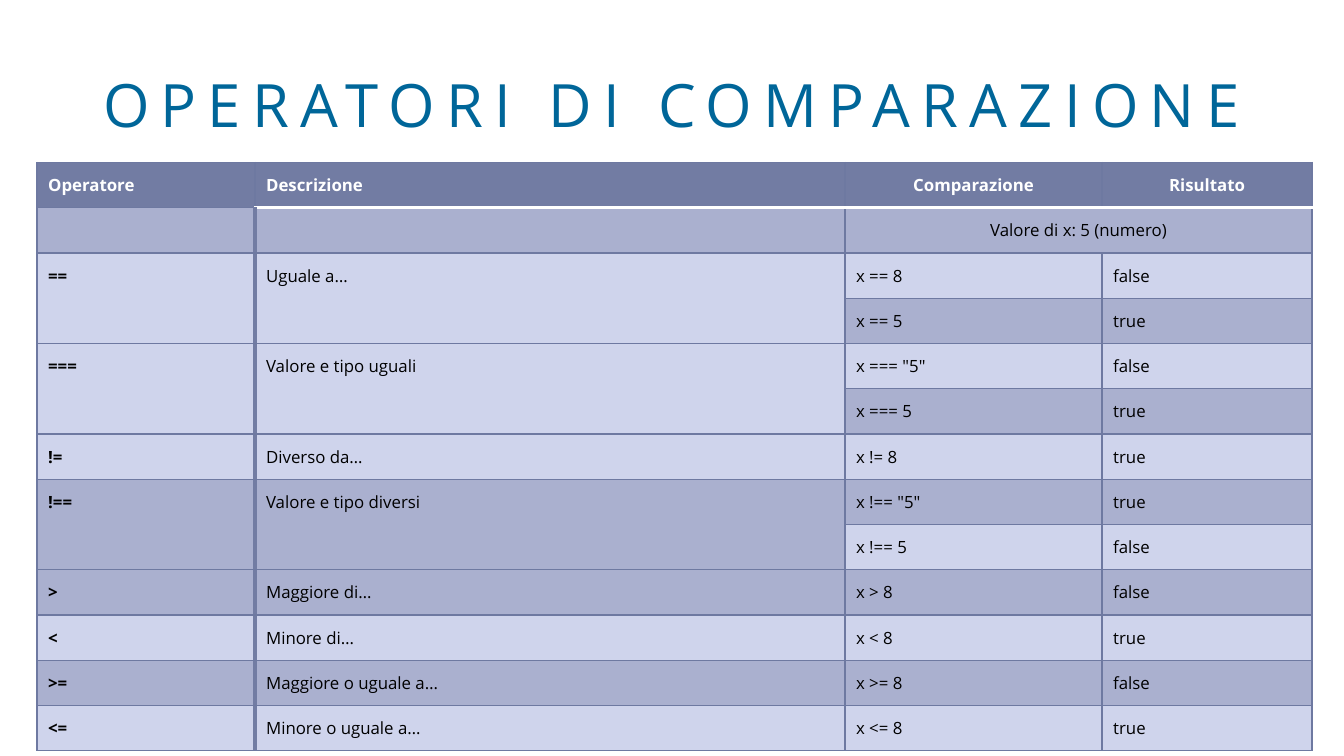
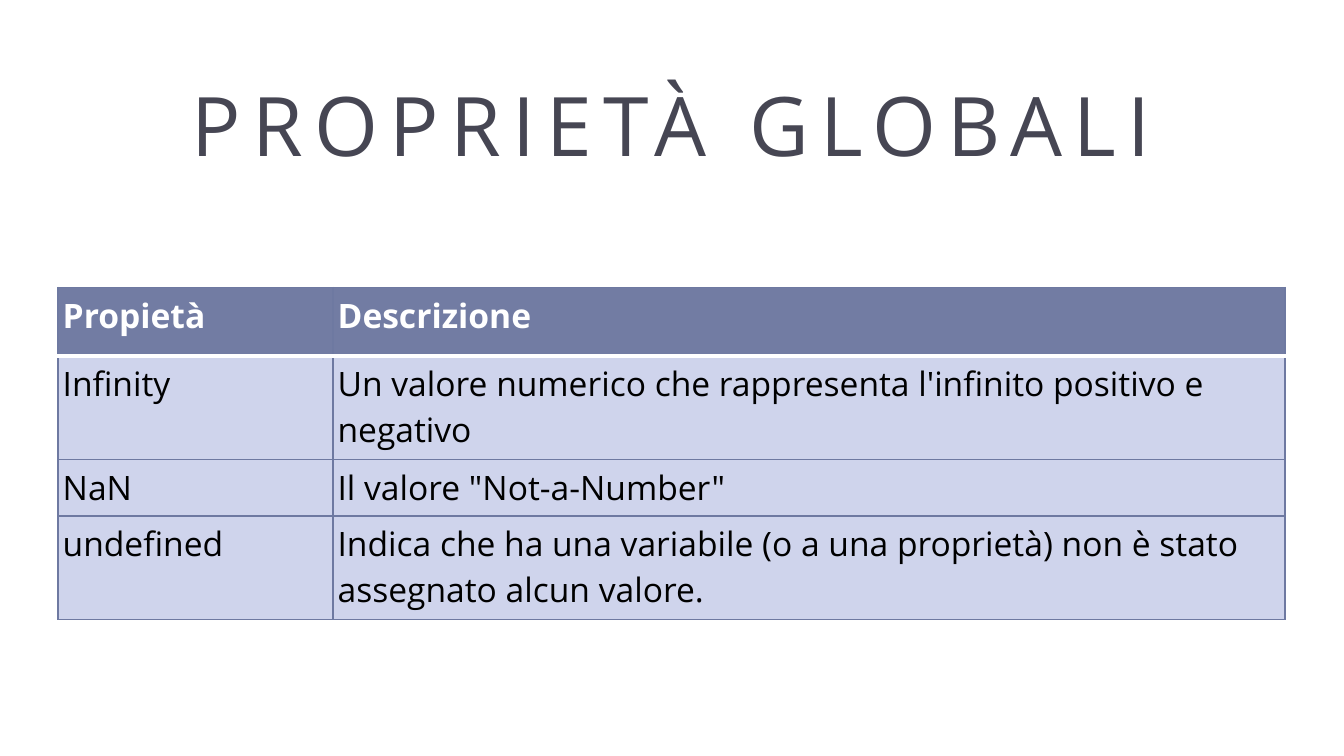
from dataclasses import dataclass

from lxml.etree import SubElement
from pptx import Presentation
from pptx.dml.color import RGBColor
from pptx.enum.text import MSO_ANCHOR as Anchor, PP_ALIGN as Align
from pptx.oxml.ns import qn
from pptx.slide import Slide
from pptx.table import _Cell as Cell
from pptx.text.text import _Paragraph as Paragraph
from pptx.util import Inches, Pt

FONT = "Open Sans"
WIDTH, HEIGHT = Inches(10), Inches(5.625)
WHITE, BLACK = "FFFFFF", "000000"
HEADER, LIGHT, DARK = "727CA3", "CFD4EC", "AAB0CF"
THIN, THICK, RULE = ("6E79A1", 0.75), (HEADER, 2), (WHITE, 2)


@dataclass(frozen=True)
class Title:
    """A slide title; top is a percentage of the slide height."""
    text: str
    top: float
    size: int
    color: str


@dataclass(frozen=True)
class Grid:
    """A table; lengths are percentages of the slide, padding is in points."""
    left: float
    top: float
    columns: tuple[float, ...]
    heights: tuple[float, ...]
    rows: tuple[tuple[str, ...], ...]
    size: int
    padding: float
    keyed: bool = False
    banded: bool = False
    centered: tuple[tuple[int, int], ...] = ()
    merges: tuple[tuple[int, int, int, int], ...] = ()


OPERATORS = Grid(
    left=2.75, top=21.5, columns=(16.22, 43.9, 19.13, 15.62), heights=(5.16,) * 13,
    rows=(
        ("Operatore", "Descrizione", "Comparazione", "Risultato"),
        ("", "", "Valore di x: 5 (numero)", ""),
        ("==", "Uguale a…", "x == 8", "false"),
        ("", "", "x == 5", "true"),
        ("===", "Valore e tipo uguali", 'x === "5"', "false"),
        ("", "", "x === 5", "true"),
        ("!=", "Diverso da…", "x != 8", "true"),
        ("!==", "Valore e tipo diversi", 'x !== "5"', "true"),
        ("", "", "x !== 5", "false"),
        (">", "Maggiore di…", "x > 8", "false"),
        ("<", "Minore di…", "x < 8", "true"),
        (">=", "Maggiore o uguale a…", "x >= 8", "false"),
        ("<=", "Minore o uguale a…", "x <= 8", "true"),
    ),
    size=9, padding=6, keyed=True, banded=True,
    centered=((0, 2), (0, 3), (1, 2)),
    merges=((1, 2, 1, 3),) + tuple((row, col, row + 1, col) for row in (2, 4, 7) for col in (0, 1)),
)

PROPERTIES = Grid(
    left=4.32, top=38.04, columns=(20.46, 70.84), heights=(9.07, 13.69, 7.47, 13.69),
    rows=(
        ("Propietà", "Descrizione"),
        ("Infinity", "Un valore numerico che rappresenta l'infinito positivo e negativo"),
        ("NaN", 'Il valore "Not-a-Number"'),
        ("undefined", "Indica che ha una variabile (o a una proprietà) non è stato assegnato alcun valore."),
    ),
    size=18, padding=2.5,
)

SLIDES = (
    (OPERATORS, Title("OPERATORI DI COMPARAZIONE", 5.33, 32, "006699")),
    (Title("PROPRIETÀ GLOBALI", 8, 44, "464653"), PROPERTIES),
)


def rgb(color: str) -> RGBColor:
    """Turn a hex string into a colour."""
    return RGBColor.from_string(color)


def across(percent: float) -> int:
    """Return a share of the slide width."""
    return round(WIDTH * percent / 100)


def down(percent: float) -> int:
    """Return a share of the slide height."""
    return round(HEIGHT * percent / 100)


def style(para: Paragraph, size: int, color: str, bold: bool = False) -> None:
    """Set the font of a whole paragraph."""
    font = para.font
    font.name, font.size, font.bold = FONT, Pt(size), bold
    font.color.rgb = rgb(color)


def draw_title(page: Slide, title: Title) -> None:
    """Add a centred, letter-spaced title."""
    box = page.shapes.add_textbox(across(5), down(title.top), across(90), down(16.71))
    frame = box.text_frame
    frame.word_wrap = True
    frame.vertical_anchor = Anchor.MIDDLE
    para = frame.paragraphs[0]
    para.alignment = Align.CENTER
    style(para, title.size, title.color)
    span = para.add_run()
    span.text = title.text
    span._r.get_or_add_rPr().set("spc", "600")


def draw_borders(cell: Cell, row: int, col: int, keyed: bool) -> None:
    """Outline a cell, with a rule under the header and beside a key column."""
    rule = THIN if keyed and col == 0 else RULE
    side = THICK if keyed and row > 0 else THIN
    edges = {
        "a:lnL": side if col == 1 else THIN,
        "a:lnR": side if col == 0 else THIN,
        "a:lnT": rule if row == 1 else THIN,
        "a:lnB": rule if row == 0 else THIN,
    }
    properties = cell._tc.get_or_add_tcPr()
    for tag, (color, points) in edges.items():
        line = SubElement(properties, qn(tag), w=str(Pt(points)))
        SubElement(SubElement(line, qn("a:solidFill")), qn("a:srgbClr"), val=color)


def draw_cell(cell: Cell, grid: Grid, row: int, col: int) -> None:
    """Fill one cell with its text, colours and borders."""
    header = row == 0
    cell.margin_left = cell.margin_right = cell.margin_top = cell.margin_bottom = Pt(grid.padding)
    draw_borders(cell, row, col, grid.keyed)
    cell.fill.solid()
    body = DARK if grid.banded and row % 2 else LIGHT
    cell.fill.fore_color.rgb = rgb(HEADER if header else body)
    para = cell.text_frame.paragraphs[0]
    para.alignment = Align.CENTER if (row, col) in grid.centered else Align.LEFT
    style(para, grid.size, WHITE if header else BLACK, header or (grid.keyed and col == 0))
    text = grid.rows[row][col]
    if text:
        para.add_run().text = text
    else:
        SubElement(para._p, qn("a:endParaRPr"), sz=str(grid.size * 100))


def draw_grid(page: Slide, grid: Grid) -> None:
    """Add a table."""
    table = page.shapes.add_table(
        len(grid.rows), len(grid.columns), across(grid.left), down(grid.top),
        across(sum(grid.columns)), down(sum(grid.heights)),
    ).table
    table.first_row = table.horz_banding = False
    for column, width in zip(table.columns, grid.columns):
        column.width = across(width)
    for line, height in zip(table.rows, grid.heights):
        line.height = down(height)
    for row, texts in enumerate(grid.rows):
        for col in range(len(texts)):
            draw_cell(table.cell(row, col), grid, row, col)
    for top, left, bottom, right in grid.merges:
        table.cell(top, left).merge(table.cell(bottom, right))


def main() -> None:
    """Build and save the deck."""
    deck = Presentation()
    deck.slide_width, deck.slide_height = WIDTH, HEIGHT
    for items in SLIDES:
        page = deck.slides.add_slide(deck.slide_layouts[6])
        for item in items:
            if isinstance(item, Title):
                draw_title(page, item)
            else:
                draw_grid(page, item)
    deck.save("out.pptx")


if __name__ == "__main__":
    main()
